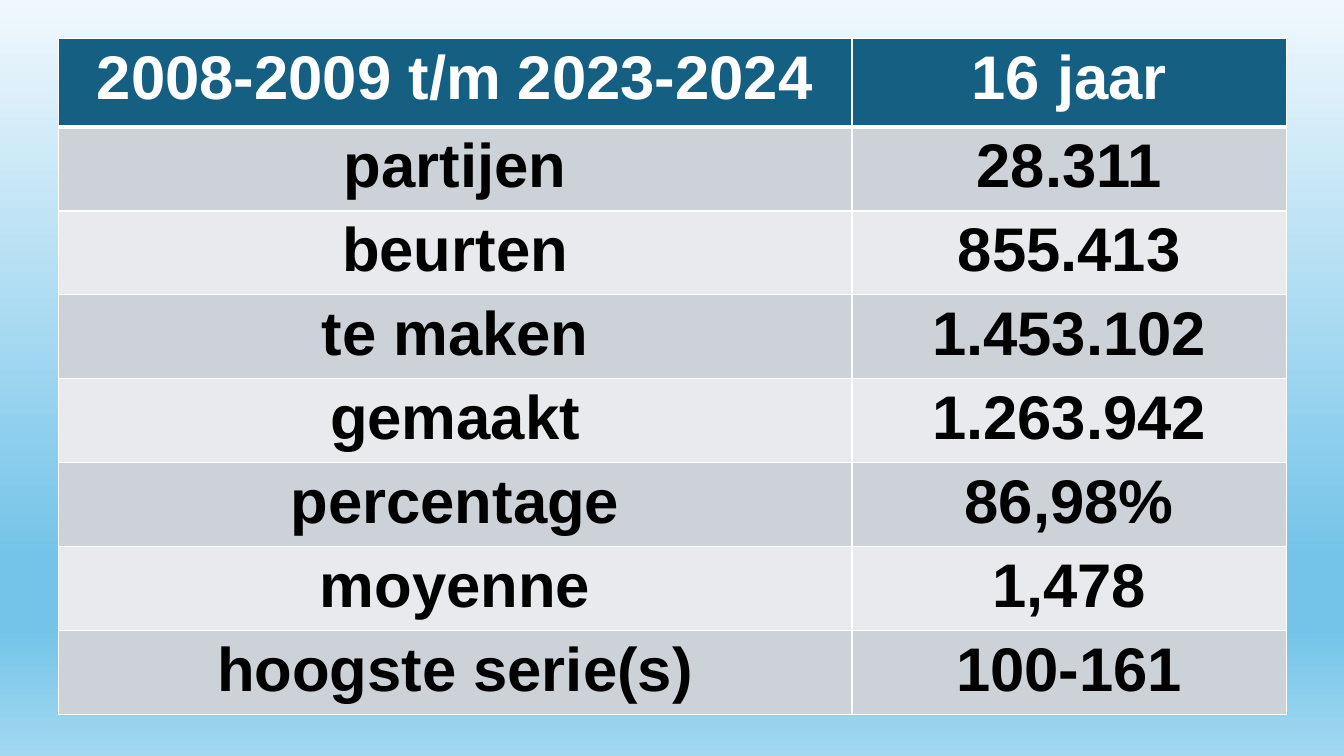
from pptx import Presentation, util as u
from pptx.dml.color import RGBColor
from pptx.enum import text
from pptx.oxml import parse_xml
from pptx.oxml.ns import nsdecls

COLOURS = {
    "header": "156082", "odd": "CCD2D8", "even": "E8EAED",
    "white": "FFFFFF", "black": "000000",
}
SKY = [(0, "F0F8FD"), (74, "74C4E9"), (83, "74C4E9"), (100, "A2D8F0")]
TOTALS = [
    ("2008-2009 t/m 2023-2024", "16 jaar"),
    ("partijen", "28.311"),
    ("beurten", "855.413"),
    ("te maken", "1.453.102"),
    ("gemaakt", "1.263.942"),
    ("percentage", "86,98%"),
    ("moyenne", "1,478"),
    ("hoogste serie(s)", "100-161"),
]


def paint_sky(page):
    """Give the page its vertical gradient background."""
    stops = "".join(
        f'<a:gs pos="{place * 1000}"><a:srgbClr val="{colour}"/></a:gs>'
        for place, colour in SKY
    )
    page.element.cSld.insert(0, parse_xml(
        f'<p:bg {nsdecls("p", "a")}><p:bgPr><a:gradFill rotWithShape="1">'
        f'<a:gsLst>{stops}</a:gsLst><a:lin ang="5400000" scaled="0"/>'
        '</a:gradFill><a:effectLst/></p:bgPr></p:bg>'
    ))


def draw_borders(cell, widths):
    """Draw white cell borders with the given widths in points."""
    properties = cell._tc.get_or_add_tcPr()
    for index, (side, width) in enumerate(widths.items()):
        properties.insert(index, parse_xml(
            f'<a:ln{side} {nsdecls("a")} w="{u.Pt(width)}"><a:solidFill>'
            f'<a:srgbClr val="{COLOURS["white"]}"/></a:solidFill></a:ln{side}>'
        ))


def fill_cell(cell, words, row):
    """Write and style one cell according to its row."""
    background = "header" if row == 0 else "odd" if row % 2 else "even"
    cell.fill.solid()
    cell.fill.fore_color.rgb = RGBColor.from_string(COLOURS[background])
    draw_borders(cell, {"L": 1, "R": 1, "T": 3 if row == 1 else 1,
                        "B": 3 if row == 0 else 1})
    para = cell.text_frame.paragraphs[0]
    para.alignment = text.PP_ALIGN.CENTER
    span = para.add_run()
    span.text = words
    span.font.name = "Arial"
    span.font.size = u.Pt(44)
    span.font.bold = True
    ink = "white" if row == 0 else "black"
    span.font.color.rgb = RGBColor.from_string(COLOURS[ink])


def add_totals(page, left, top, width, height):
    """Place the table of totals in the given box."""
    table = page.shapes.add_table(
        len(TOTALS), 2, left, top, width, height).table
    label_width = u.Inches(7.87)
    table.columns[0].width = label_width
    table.columns[1].width = width - label_width
    header_height = u.Inches(0.88)
    body_height = (height - header_height) // (len(TOTALS) - 1)
    for row, entries in enumerate(TOTALS):
        table.rows[row].height = body_height if row else header_height
        for column, words in enumerate(entries):
            fill_cell(table.cell(row, column), words, row)


def main():
    """Build and save the deck."""
    deck = Presentation()
    deck.slide_width, deck.slide_height = u.Inches(13.33), u.Inches(7.5)
    page = deck.slides.add_slide(deck.slide_layouts[6])
    paint_sky(page)
    add_totals(page, u.Inches(0.58), u.Inches(0.38),
               u.Inches(12.18), u.Inches(6.71))
    deck.save("out.pptx")


if __name__ == "__main__":
    main()
